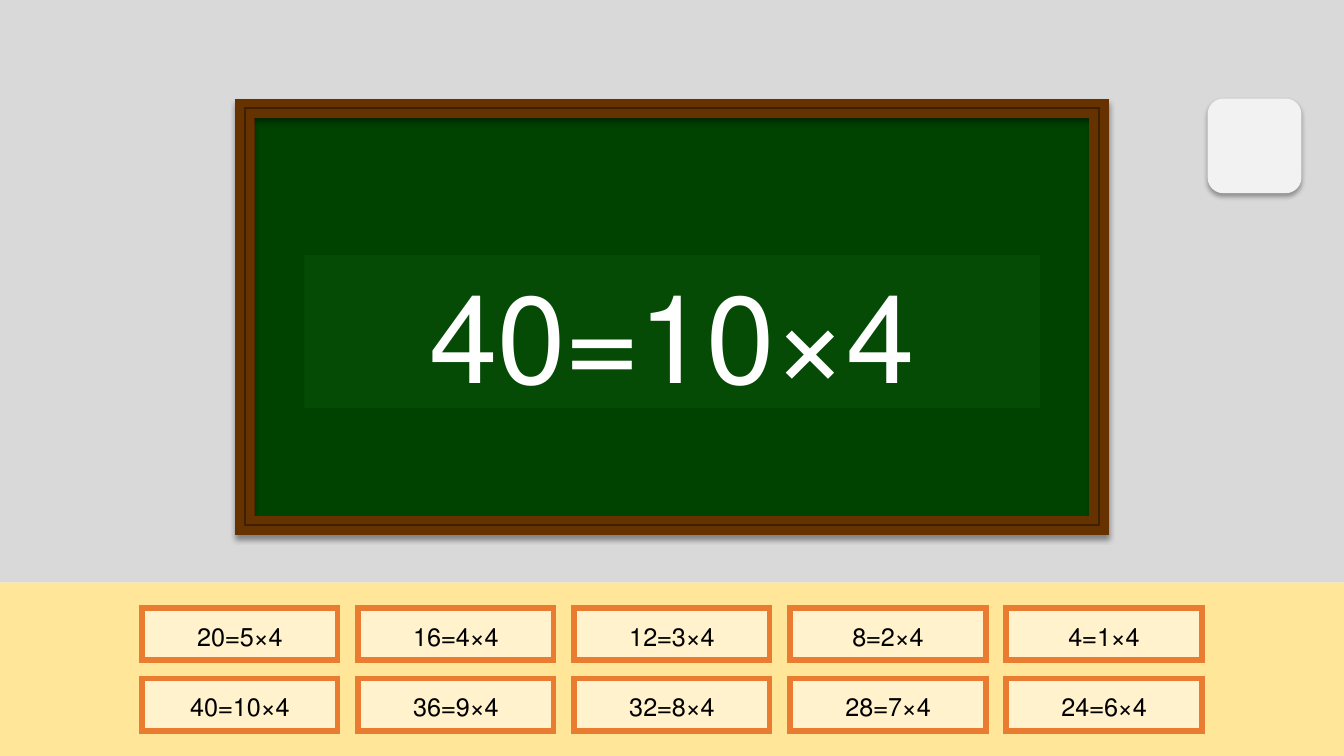
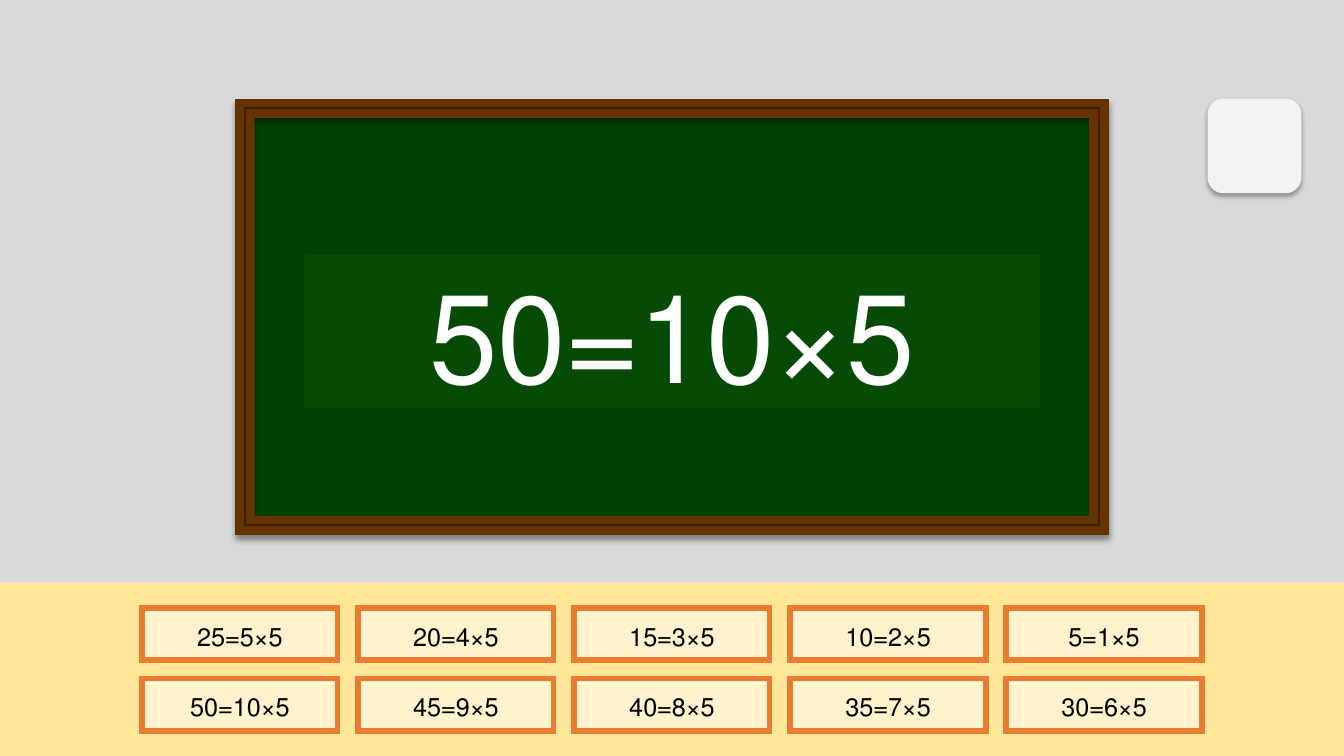
from lxml.etree import SubElement
from pptx import Presentation
from pptx.dml.color import RGBColor
from pptx.enum.shapes import MSO_SHAPE as SHAPE
from pptx.enum.text import MSO_ANCHOR as ANCHOR, PP_ALIGN as ALIGN
from pptx.oxml.ns import qn
from pptx.util import Pt

TABLES = (4, 5)
MULTIPLIERS = range(1, 11)

WIDTH, HEIGHT = 960, 540
FLOOR_TOP = 416
BOARD = (178.8, 81.2, 602.4, 290.1)
FRAME_DEPTH = 7.6
TILE = (862.6, 70.4, 67, 67.6)
ANSWER = (217.4, 182.2, 525.6, 109.4)

COLUMNS = 5
BUTTON_W, BUTTON_H = 139.7, 37.4
PITCH_X, PITCH_Y = 154.3, 50.5
BUTTONS_TOP = 434.2
BUTTONS_LEFT = (WIDTH - (COLUMNS - 1) * PITCH_X - BUTTON_W) / 2

FONT = "Calibri"
WALL, FLOOR, TILE_FILL = "D9D9D9", "FFE699", "F2F2F2"
GREEN, WOOD, GROOVE = "004200", "663300", "3E1F00"
CREAM, ORANGE, ANSWER_FILL = "FFF2CC", "E97C30", "054A05"
BLACK, WHITE = "000000", "FFFFFF"


def color(hex_code):
    return RGBColor.from_string(hex_code)


def paint(shape, fill, line=None, line_width=0, shadow=None):
    """Fill and outline a shape; shadow is (opacity %, blur, distance)."""
    shape.shadow.inherit = False
    shape.fill.solid()
    shape.fill.fore_color.rgb = color(fill)
    props = shape._element.spPr
    if line:
        shape.line.color.rgb = color(line)
        shape.line.width = Pt(line_width)
        SubElement(props.find(qn("a:ln")), qn("a:miter"), lim="800000")
    else:
        shape.line.fill.background()
    if shadow:
        opacity, blur, distance = shadow
        outer = SubElement(props.find(qn("a:effectLst")), qn("a:outerShdw"),
                           blurRad=str(Pt(blur)), dist=str(Pt(distance)),
                           dir="5400000", algn="t", rotWithShape="0")
        tint = SubElement(outer, qn("a:srgbClr"), val=BLACK)
        SubElement(tint, qn("a:alpha"), val=str(opacity * 1000))
    return shape


def add_box(slide, box, fill, kind=SHAPE.RECTANGLE, **style):
    return paint(slide.shapes.add_shape(kind, *map(Pt, box)), fill, **style)


def write(shape, text, size, ink):
    """Write a centred right-to-left formula."""
    frame = shape.text_frame
    frame.word_wrap = True
    frame.vertical_anchor = ANCHOR.MIDDLE
    frame.margin_left = frame.margin_right = frame.margin_bottom = Pt(28)
    frame.margin_top = Pt(31)
    paragraph = frame.paragraphs[0]
    paragraph.alignment = ALIGN.CENTER
    paragraph._p.get_or_add_pPr().set("rtl", "1")
    run = paragraph.add_run()
    run.text = text
    run.font.name = FONT
    run.font.size = Pt(size)
    run.font.color.rgb = color(ink)


def corners(box, grow=0):
    """Corners of a box, clockwise from the top left, moved out by grow."""
    left, top, width, height = box
    x1, y1 = left - grow, top - grow
    x2, y2 = left + width + grow, top + height + grow
    return [(Pt(x), Pt(y)) for x, y in ((x1, y1), (x2, y1), (x2, y2), (x1, y2))]


def add_frame(slide):
    outer = corners(BOARD, FRAME_DEPTH)
    inner = corners(BOARD)[::-1]
    builder = slide.shapes.build_freeform(*outer[0])
    builder.add_line_segments(outer[1:])
    builder.move_to(*inner[0])
    builder.add_line_segments(inner[1:])
    paint(builder.convert_to_shape(), GROOVE, line=WOOD, line_width=6,
          shadow=(40, 4, 3))


def add_classroom(slide):
    add_box(slide, (0, FLOOR_TOP, WIDTH, HEIGHT - FLOOR_TOP), FLOOR)
    add_box(slide, (0, 0, WIDTH, FLOOR_TOP), WALL)
    add_box(slide, BOARD, GREEN, line=WOOD, line_width=6)
    add_frame(slide)
    add_box(slide, TILE, TILE_FILL, SHAPE.ROUNDED_RECTANGLE, shadow=(32, 3.5, 2.2))


def add_buttons(slide, formulas):
    """Lay the formulas out in rows that run from right to left."""
    for index, formula in enumerate(formulas):
        row, column = divmod(index, COLUMNS)
        left = BUTTONS_LEFT + (COLUMNS - 1 - column) * PITCH_X
        top = BUTTONS_TOP + row * PITCH_Y
        button = add_box(slide, (left, top, BUTTON_W, BUTTON_H), CREAM,
                         line=ORANGE, line_width=4)
        write(button, formula, size=18, ink=BLACK)


def main():
    deck = Presentation()
    deck.slide_width, deck.slide_height = Pt(WIDTH), Pt(HEIGHT)
    for number in TABLES:
        formulas = [f"{number}×{times}={number * times}" for times in MULTIPLIERS]
        slide = deck.slides.add_slide(deck.slide_layouts[6])
        add_classroom(slide)
        add_buttons(slide, formulas)
        answer = add_box(slide, ANSWER, ANSWER_FILL)
        write(answer, formulas[-1], size=88, ink=WHITE)
    deck.save("out.pptx")


if __name__ == "__main__":
    main()
